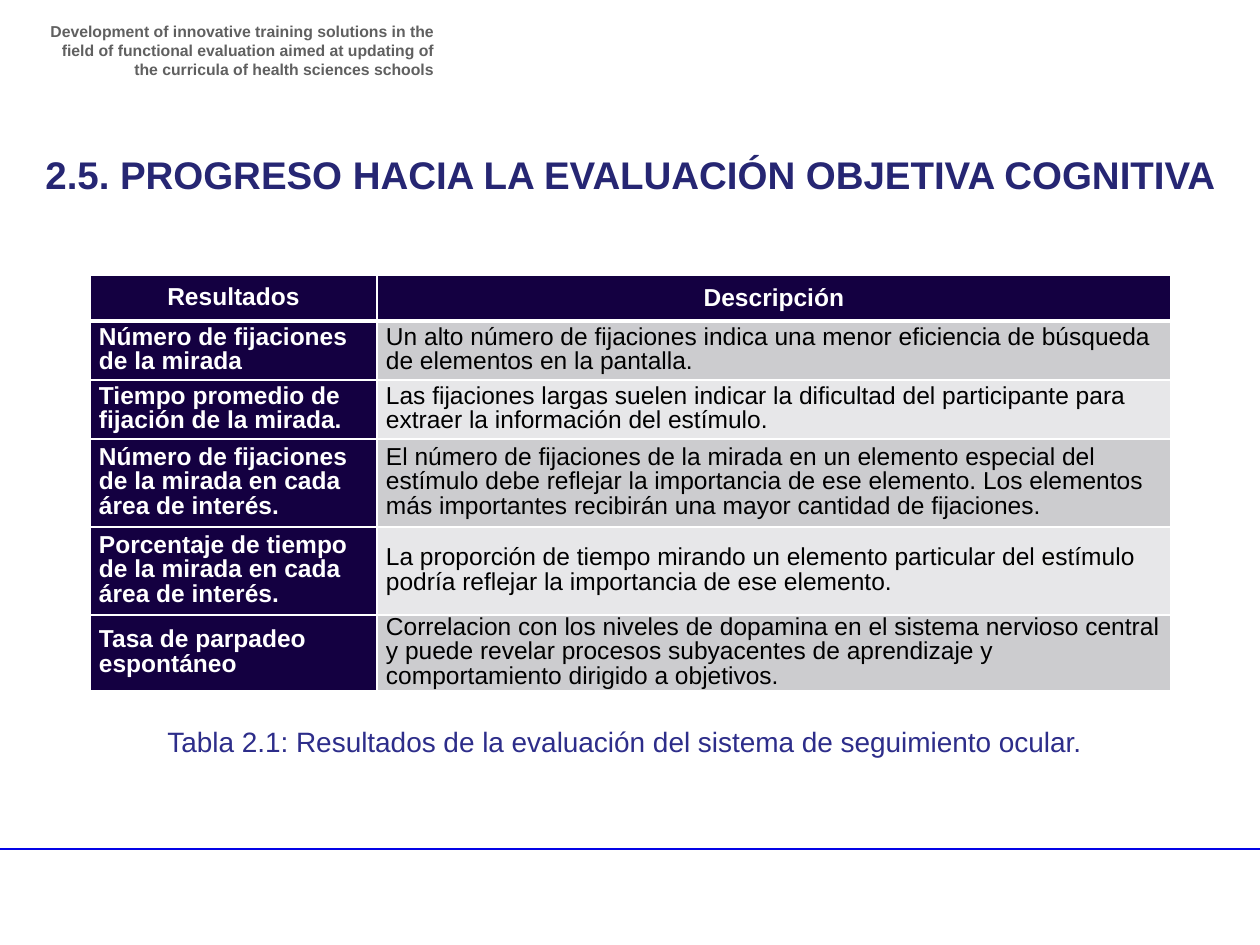
from lxml import etree
from pptx import Presentation
from pptx.dml.color import RGBColor
from pptx.enum.shapes import MSO_CONNECTOR
from pptx.enum.text import MSO_ANCHOR, PP_ALIGN
from pptx.oxml.ns import qn
from pptx.util import Pt

PX = 914400 // 126
LEFT, CENTER, RIGHT = PP_ALIGN.LEFT, PP_ALIGN.CENTER, PP_ALIGN.RIGHT
MIDDLE = MSO_ANCHOR.MIDDLE
NAVY, WHITE, BLACK = "140041", "FFFFFF", "000000"
BANDS = ["CCCCCF", "E7E7E9"]


def write(frame, text, size, color, bold=False, align=LEFT):
    """Fill the first paragraph of a text frame and return it."""
    para = frame.paragraphs[0]
    para.alignment = align
    span = para.add_run()
    span.text = text
    for name, value in {"name": "Arial", "size": Pt(size), "bold": bold}.items():
        setattr(span.font, name, value)
    span.font.color.rgb = RGBColor.from_string(color)
    return para


def add_border(cell, side, width):
    props = cell._tc.get_or_add_tcPr()
    line = etree.SubElement(props, qn(f"a:ln{side}"), w=str(Pt(width)))
    fill = etree.SubElement(line, qn("a:solidFill"))
    etree.SubElement(fill, qn("a:srgbClr"), val=WHITE)


deck = Presentation()
deck.slide_width, deck.slide_height = 1260 * PX, 945 * PX
page = deck.slides.add_slide(deck.slide_layouts[5])

# Footer rule
rule = page.shapes.add_connector(
    MSO_CONNECTOR.STRAIGHT, -6 * PX, 849 * PX, 1260 * PX, 849 * PX)
rule.line.color.rgb = RGBColor.from_string("0404E6")
rule.line.width = Pt(1)
etree.SubElement(rule._element.spPr, qn("a:effectLst"))

# Project name
project = page.shapes.add_textbox(35 * PX, 16 * PX, 411 * PX, 59 * PX)
project.text_frame.word_wrap = True
write(project.text_frame,
      "Development of innovative training solutions in the ﬁeld of functional "
      "evaluation aimed at updating of the curricula of health sciences schools",
      9, "606060", True, RIGHT)

# Title
title = page.shapes.title
title_place = {"left": 13, "top": 145, "width": 1235, "height": 59}
for name, value in title_place.items():
    setattr(title, name, value * PX)
title.text_frame.vertical_anchor = MIDDLE
write(title.text_frame, "2.5. PROGRESO HACIA LA EVALUACIÓN OBJETIVA COGNITIVA",
      22, "262673", True, CENTER)

# Results table
results = [
    ("Resultados", "Descripción"),
    ("Número de fijaciones de la mirada",
     "Un alto número de fijaciones indica una menor eficiencia de búsqueda "
     "de elementos en la pantalla."),
    ("Tiempo promedio de fijación de la mirada.",
     "Las fijaciones largas suelen indicar la dificultad del participante para "
     "extraer la información del estímulo."),
    ("Número de fijaciones de la mirada en cada área de interés.",
     "El número de fijaciones de la mirada en un elemento especial del estímulo "
     "debe reflejar la importancia de ese elemento. Los elementos más "
     "importantes recibirán una mayor cantidad de fijaciones."),
    ("Porcentaje de tiempo de la mirada en cada área de interés.",
     "La proporción de tiempo mirando un elemento particular del estímulo "
     "podría reflejar la importancia de ese elemento."),
    ("Tasa de parpadeo espontáneo",
     "Correlacion con los niveles de dopamina en el sistema nervioso central y "
     "puede revelar procesos subyacentes de aprendizaje y comportamiento "
     "dirigido a objetivos."),
]
column_widths = [287, 794]
row_heights = [46, 59, 59, 88, 88, 76]
table = page.shapes.add_table(
    len(results), 2, 90 * PX, 275 * PX,
    sum(column_widths) * PX, sum(row_heights) * PX).table
for column, width in zip(table.columns, column_widths):
    column.width = width * PX
for row, height in zip(table.rows, row_heights):
    row.height = height * PX

cell_format = {"margin_left": 9 * PX, "margin_right": 9 * PX, "margin_top": 0,
               "margin_bottom": 0, "vertical_anchor": MIDDLE}
for r, texts in enumerate(results):
    for c, text in enumerate(texts):
        cell = table.cell(r, c)
        for name, value in cell_format.items():
            setattr(cell, name, value)
        heading = r == 0 or c == 0
        para = write(cell.text_frame, text, 14, WHITE if heading else BLACK,
                     heading, CENTER if r == 0 else LEFT)
        if (r, c) != (0, 1):
            para.line_spacing = Pt(14)
        for side in "LRTB":
            at_header_edge = (r, side) in [(0, "B"), (1, "T")]
            add_border(cell, side, 3 if at_header_edge else 1)
        cell.fill.solid()
        cell.fill.fore_color.rgb = RGBColor.from_string(
            NAVY if heading else BANDS[(r - 1) % 2])

# Caption
caption = page.shapes.add_textbox(155 * PX, 718 * PX, 950 * PX, 47 * PX)
caption.text_frame.word_wrap = False
write(caption.text_frame,
      "Tabla 2.1: Resultados de la evaluación del sistema de seguimiento ocular.",
      16, "2D2D8A")

deck.save("out.pptx")
